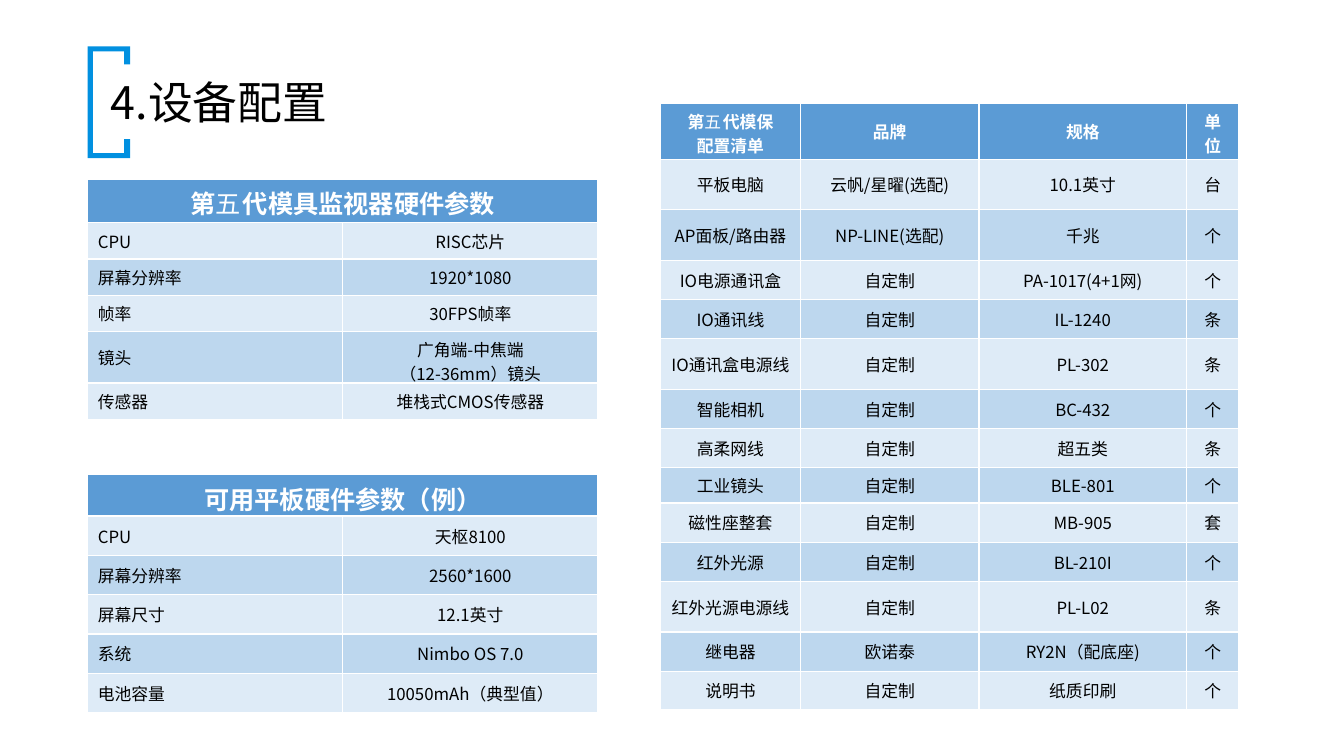
"""Build the equipment configuration slide with its three tables."""
from lxml.etree import SubElement
from pptx import Presentation
from pptx.dml.color import RGBColor
from pptx.enum.text import MSO_ANCHOR as ANCHOR, PP_ALIGN as ALIGN
from pptx.oxml.ns import qn
from pptx.util import Inches, Pt

FONT = "Noto Sans CJK SC"
BLACK = RGBColor(0x00, 0x00, 0x00)
WHITE = RGBColor(0xFF, 0xFF, 0xFF)
BRACKET_BLUE = RGBColor(0x01, 0x90, 0xE0)
HEADER_BLUE = RGBColor(0x5B, 0x9B, 0xD5)
BANDS = (RGBColor(0xBD, 0xD7, 0xEE), RGBColor(0xDE, 0xEB, 0xF7))

TITLE = "4.设备配置"
BRACKET = [(0.87, 0.46), (1.29, 0.46), (1.29, 0.64), (1.23, 0.64), (1.23, 0.51), (0.92, 0.51),
           (0.92, 1.52), (1.23, 1.52), (1.23, 1.38), (1.29, 1.38), (1.29, 1.57), (0.87, 1.57)]
LIGHT_CHAR = "五"

PARTS = [
    ("第五代模保\n配置清单", "品牌", "规格", "单位"),
    ("平板电脑", "云帆/星曜(选配)", "10.1英寸", "台"),
    ("AP面板/路由器", "NP-LINE(选配)", "千兆", "个"),
    ("IO电源通讯盒", "自定制", "PA-1017(4+1网)", "个"),
    ("IO通讯线", "自定制", "IL-1240", "条"),
    ("IO通讯盒电源线", "自定制", "PL-302", "条"),
    ("智能相机", "自定制", "BC-432", "个"),
    ("高柔网线", "自定制", "超五类", "条"),
    ("工业镜头", "自定制", "BLE-801", "个"),
    ("磁性座整套", "自定制", "MB-905", "套"),
    ("红外光源", "自定制", "BL-210I", "个"),
    ("红外光源电源线", "自定制", "PL-L02", "条"),
    ("继电器", "欧诺泰", "RY2N（配底座)", "个"),
    ("说明书", "自定制", "纸质印刷", "个"),
]
MONITOR = [
    ("第五代模具监视器硬件参数",),
    ("CPU", "RISC芯片"),
    ("屏幕分辨率", "1920*1080"),
    ("帧率", "30FPS帧率"),
    ("镜头", "广角端-中焦端\n（12-36mm）镜头"),
    ("传感器", "堆栈式CMOS传感器"),
]
TABLET = [
    ("可用平板硬件参数（例）",),
    ("CPU", "天枢8100"),
    ("屏幕分辨率", "2560*1600"),
    ("屏幕尺寸", "12.1英寸"),
    ("系统", "Nimbo OS 7.0"),
    ("电池容量", "10050mAh（典型值）"),
]
SPEC_COLS = [2.53, 2.53]
TABLES = [
    (PARTS, 6.55, 1.03, [1.39, 1.77, 2.06, 0.52],
     [0.55, 0.5, 0.5, 0.39, 0.39, 0.5, 0.39, 0.39, 0.35, 0.39, 0.39, 0.5, 0.39, 0.38]),
    (MONITOR, 0.87, 1.78, SPEC_COLS, [0.43, 0.36, 0.36, 0.36, 0.51, 0.36]),
    (TABLET, 0.87, 4.71, SPEC_COLS, [0.41] + [0.39] * 5),
]


def style(p, size, color, bold=False, align=None):
    p.alignment = align
    f = p.font
    f.name, f.size, f.bold = FONT, Pt(size), bold
    f.color.rgb = color
    SubElement(f._element, qn("a:ea"), typeface=FONT)


def add_header_runs(p, text):
    before, light, after = text.partition(LIGHT_CHAR)
    for part in filter(None, (before, light, after)):
        r = p.add_run()
        r.text = part
        if part == LIGHT_CHAR:
            r.font.bold = False
            r.font._element.set("spc", "130")


def fill_cell(cell, text, header, size, align, fill):
    cell.fill.solid()
    cell.fill.fore_color.rgb = fill
    cell.vertical_anchor = ANCHOR.MIDDLE
    tf = cell.text_frame
    for i, line in enumerate(text.split("\n")):
        p = tf.add_paragraph() if i else tf.paragraphs[0]
        if header:
            add_header_runs(p, line)
        else:
            p.add_run().text = line
        style(p, size, WHITE if header else BLACK, header, align)


def add_grid(s, rows, left, top, widths, heights):
    table = s.shapes.add_table(len(rows), len(widths), Inches(left), Inches(top),
                               Inches(sum(widths)), Inches(sum(heights))).table
    for col, width in zip(table.columns, widths):
        col.width = Inches(width)
    for row, height in zip(table.rows, heights):
        row.height = Inches(height)
    banner = len(rows[0]) == 1
    if banner:
        table.cell(0, 0).merge(table.cell(0, len(widths) - 1))
    for i, row in enumerate(rows):
        header = i == 0
        for j, text in enumerate(row):
            size = 18 if banner and header else 12
            align = ALIGN.LEFT if banner and not header and j == 0 else ALIGN.CENTER
            fill = HEADER_BLUE if header else BANDS[i % 2]
            fill_cell(table.cell(i, j), text, header, size, align, fill)


def main():
    prs = Presentation()
    prs.slide_width, prs.slide_height = Inches(13.33), Inches(7.5)
    s = prs.slides.add_slide(prs.slide_layouts[6])

    points = [(Inches(x), Inches(y)) for x, y in BRACKET]
    outline = s.shapes.build_freeform(*points[0])
    outline.add_line_segments(points[1:], close=True)
    bracket = outline.convert_to_shape()
    bracket.shadow.inherit = False
    bracket.fill.solid()
    bracket.fill.fore_color.rgb = BRACKET_BLUE
    bracket.line.fill.background()

    tf = s.shapes.add_textbox(Inches(1), Inches(0.75), Inches(2.76), Inches(0.71)).text_frame
    tf.word_wrap = True
    p = tf.paragraphs[0]
    p.add_run().text = TITLE
    p.line_spacing = 0.9
    style(p, 32, BLACK)

    for grid in TABLES:
        add_grid(s, *grid)
    prs.save("out.pptx")


if __name__ == "__main__":
    main()
